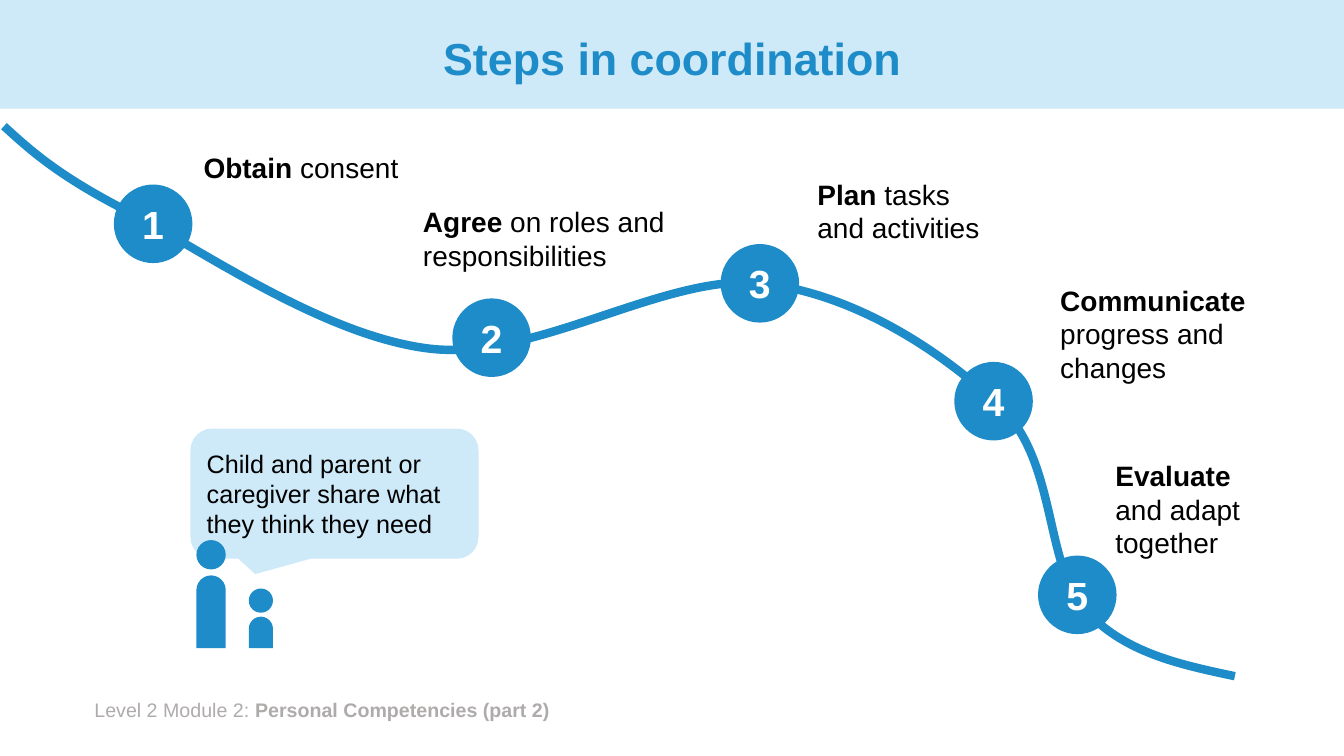
from lxml.etree import SubElement
from pptx import Presentation
from pptx.dml.color import RGBColor
from pptx.enum.shapes import MSO_SHAPE
from pptx.enum.text import MSO_ANCHOR, PP_ALIGN
from pptx.oxml.ns import qn
from pptx.util import Cm, Pt

BLUE, PALE, GREY, BLACK, WHITE = "1D8CC8", "CEE9F8", "AFABAB", "000000", "FFFFFF"

TITLE = "Steps in coordination"
FOOTER = ("Level 2 Module 2: ", "Personal Competencies (part 2)")
SPEECH = "Child and parent or caregiver share what they think they need"

STEPS = [
    ("Obtain", " consent", (2.87, 4.65), (4.88, 3.68, 7.26, 1.12)),
    ("Agree", " on roles and responsibilities", (11.4, 7.52), (10.41, 5.03, 7.26, 1.96)),
    ("Plan", " tasks and activities", (18.16, 6.15), (20.35, 4.34, 4.75, 1.96)),
    ("Communicate", " progress and changes", (24.05, 9.12), (26.47, 7.01, 6.38, 2.82)),
    ("Evaluate", " and adapt together", (26.16, 14), (27.86, 11.43, 4.47, 2.82)),
]
MARKER = 1.98

ROAD = [
    (0.1, 3.18),
    (0.76, 3.78), (1.45, 4.42), (3.23, 5.33),
    (5.03, 6.27), (8.18, 8.48), (10.85, 8.79),
    (13.51, 9.09), (16.79, 6.88), (19.18, 7.14),
    (21.59, 7.39), (23.9, 8.97), (25.27, 10.31),
    (26.62, 11.68), (26.34, 14.2), (27.31, 15.32),
    (28.27, 16.43), (29.69, 16.74), (31.12, 17.04),
]

FEET = 16.33
PEOPLE = [(4.95, 13.61, 0.74, 1.83), (6.27, 14.83, 0.61, 0.79)]


def rgb(value):
    return RGBColor.from_string(value)


def write(shape, *texts, size=20, color=BLACK, bold=(False,),
          align=PP_ALIGN.LEFT, anchor=MSO_ANCHOR.TOP, spacing=None):
    tf = shape.text_frame
    tf.word_wrap = True
    tf.vertical_anchor = anchor
    p = tf.paragraphs[0]
    p.alignment = align
    p.line_spacing = spacing
    for text, heavy in zip(texts, bold):
        r = p.add_run()
        r.text = text
        r.font.name = "Arial"
        r.font.size = Pt(size)
        r.font.bold = heavy
        r.font.color.rgb = rgb(color)


def add_shape(shapes, kind, box, fill=BLUE):
    sp = shapes.add_shape(kind, *map(Cm, box))
    sp.shadow.inherit = False
    sp.fill.solid()
    sp.fill.fore_color.rgb = rgb(fill)
    sp.line.fill.background()
    return sp


def add_text(shapes, box, *texts, **fmt):
    write(shapes.add_textbox(*map(Cm, box)), *texts, **fmt)


def add_curve(shapes, points):
    start, *rest = [(Cm(x), Cm(y)) for x, y in points]
    builder = shapes.build_freeform(*start)
    builder.add_line_segments(rest, close=False)
    sp = builder.convert_to_shape()
    sp.shadow.inherit = False
    sp.fill.background()
    sp.line.color.rgb = rgb(BLUE)
    sp.line.width = Pt(6)
    outline = next(sp.element.iter(qn("a:path")))
    lines = outline.findall(qn("a:lnTo"))
    for i in range(0, len(lines), 3):
        curve = SubElement(outline, qn("a:cubicBezTo"))
        for line in lines[i:i + 3]:
            curve.append(line[0])
            outline.remove(line)


def main():
    prs = Presentation()
    prs.slide_width, prs.slide_height = Cm(33.87), Cm(19.05)
    s = prs.slides.add_slide(prs.slide_layouts[5])
    shapes = s.shapes

    title = shapes.title
    add_shape(shapes, MSO_SHAPE.RECTANGLE, (0, 0, 33.87, 2.74), PALE)
    add_text(shapes, (2.13, 17.45, 23.88, 0.86), *FOOTER,
             size=14, color=GREY, bold=(False, True))
    title.left, title.top, title.width, title.height = map(Cm, (2.34, 0.33, 29.21, 2.41))
    write(title, TITLE, size=32, color=BLUE, bold=(True,),
          align=PP_ALIGN.CENTER, anchor=MSO_ANCHOR.MIDDLE, spacing=0.9)
    title.element.getparent().append(title.element)

    add_curve(shapes, ROAD)
    for number, (verb, rest, corner, box) in enumerate(STEPS, 1):
        add_text(shapes, box, verb, rest, bold=(True, False))
        marker = add_shape(shapes, MSO_SHAPE.OVAL, (*corner, MARKER, MARKER))
        write(marker, str(number), size=28, color=WHITE, bold=(True,),
              align=PP_ALIGN.CENTER, anchor=MSO_ANCHOR.MIDDLE)

    bubble = add_shape(shapes, MSO_SHAPE.ROUNDED_RECTANGULAR_CALLOUT,
                       (4.8, 10.8, 7.26, 3.28), PALE)
    for i, value in enumerate((-0.275, 0.618, 0.167)):
        bubble.adjustments[i] = value
    write(bubble, SPEECH, size=18, anchor=MSO_ANCHOR.MIDDLE)

    family = shapes.add_group_shape().shapes
    for x, top, width, height in PEOPLE:
        add_shape(family, MSO_SHAPE.OVAL, (x, top, width, width))
        body = add_shape(family, MSO_SHAPE.ROUND_2_SAME_RECTANGLE,
                         (x, FEET - height, width, height))
        body.adjustments[0] = 0.5

    prs.save("out.pptx")


if __name__ == "__main__":
    main()
